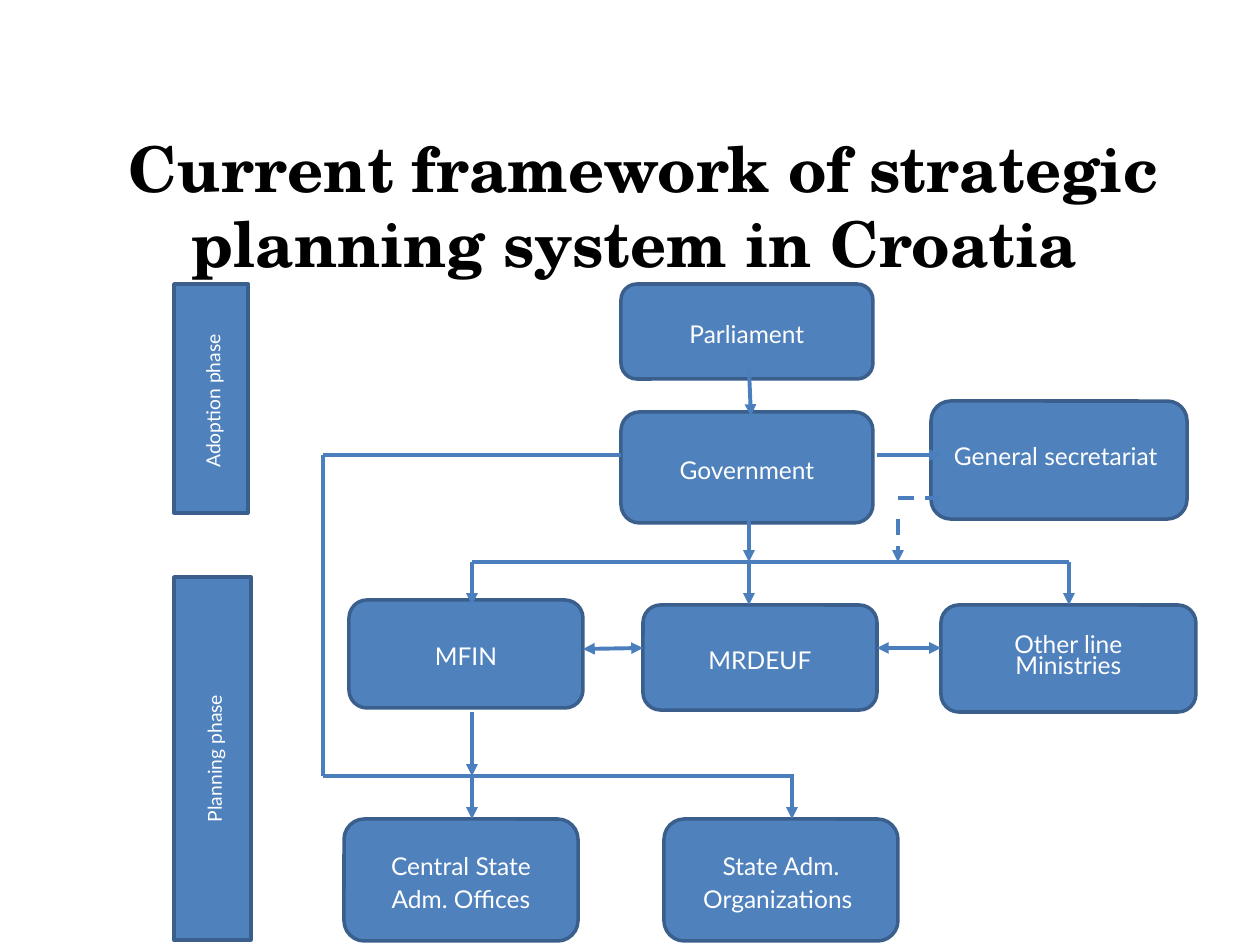
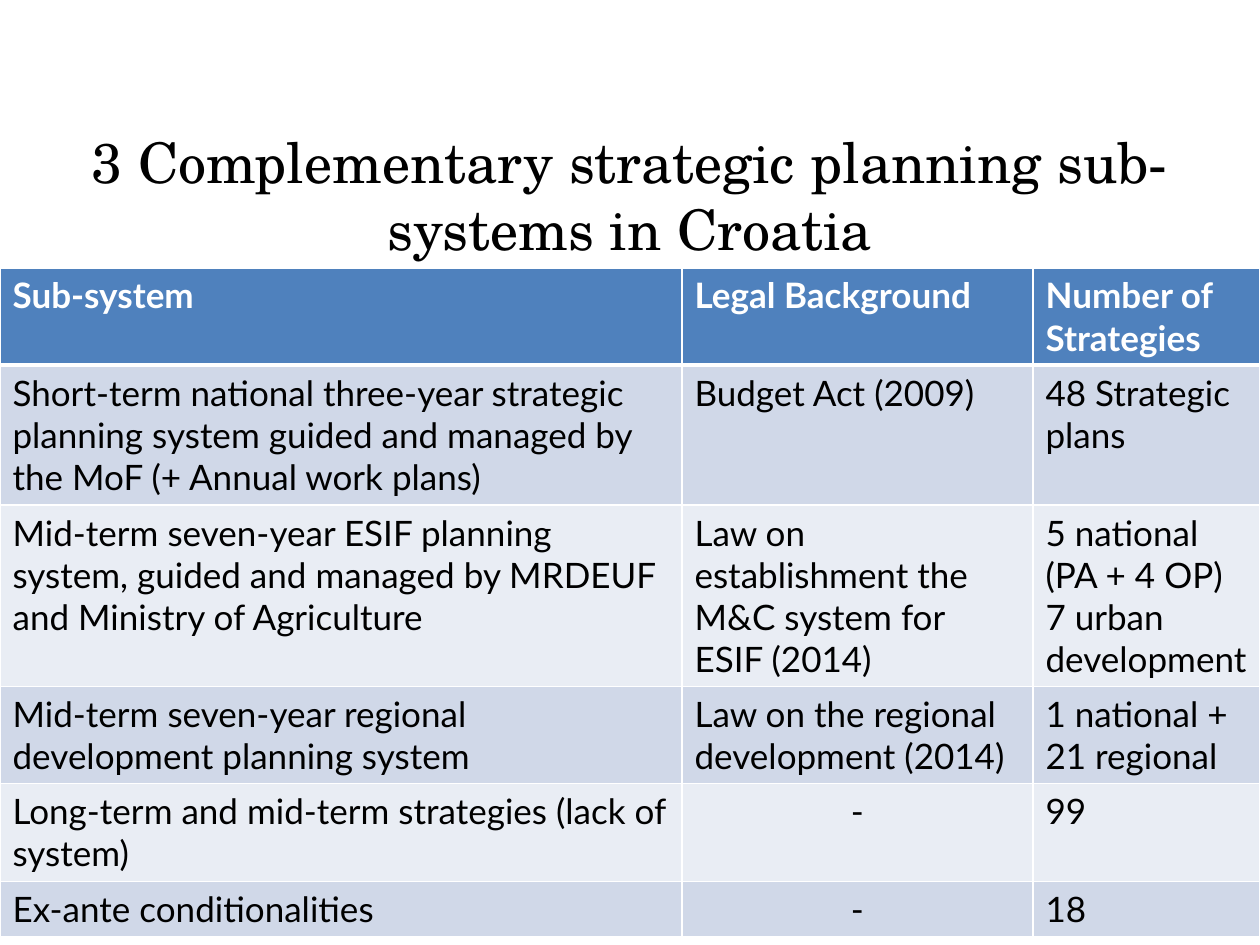
from lxml.etree import SubElement
from pptx import Presentation
from pptx.dml.color import RGBColor
from pptx.enum.dml import MSO_LINE as Dash
from pptx.enum.shapes import MSO_CONNECTOR as Link, MSO_SHAPE as Form
from pptx.enum.text import MSO_ANCHOR as Anchor, MSO_AUTO_SIZE as Fit, PP_ALIGN as Align
from pptx.oxml import parse_xml
from pptx.oxml.ns import nsdecls, qn
from pptx.util import Inches, Pt

# Shared style
SCALE = Inches(1) / 126
BLUE = RGBColor(0x4F, 0x81, 0xBD)
EDGE = RGBColor(0x3A, 0x5F, 0x8C)
WIRE = RGBColor(0x4B, 0x7E, 0xBC)
WHITE = RGBColor(0xFF, 0xFF, 0xFF)
BLACK = RGBColor(0, 0, 0)
BANDS = RGBColor(0xD0, 0xD8, 0xE8), RGBColor(0xE9, 0xED, 0xF4)
SERIF, SANS = "TeX Gyre Schola", "Lato"

# Diagram: text, left, top, width, height, line spacing
TIGHT = Pt(12)
BOXES = [
    ("Government", 621, 412, 252, 111, 1.15),
    ("General secretariat ", 931, 401, 256, 118, TIGHT),
    ("MRDEUF", 643, 605, 234, 105, 1.15),
    ("Other line Ministries", 941, 605, 255, 107, TIGHT),
    ("MFIN", 349, 600, 234, 108, 1.15),
    ("State Adm. Organizations ", 664, 819, 234, 122, 1.15),
    ("Central State Adm. Offices", 344, 819, 234, 122, 1.15),
    ("Parliament", 621, 284, 252, 95, 1.15),
]
PHASES = [
    ("Adoption phase ", 174, 284, 74, 229, 1.15),
    ("Planning phase", 174, 577, 77, 363, 1.15),
]

# Tracks that the lines follow
SIDE, LEFT, MID, ORG, AIDE, RIGHT = 323, 472, 749, 792, 898, 1069
CALL, BUS, LINE, BASE, DROP = 455, 562, 648, 776, 43
PLAIN = [
    (LEFT, BUS, RIGHT, BUS),
    (621, CALL, SIDE, CALL),
    (SIDE, CALL, SIDE, BASE),
    (SIDE, BASE, ORG + 2, BASE),
]
ARROWS = [
    (MID, 369, MID + 2, 416),
    (877, CALL, 941, CALL),
    (MID, 519, MID, BUS),
    (LEFT, 712, LEFT, BASE),
]
ARROWS += [(x, BUS, x, BUS + DROP) for x in (LEFT, MID, RIGHT)]
ARROWS += [(x, BASE, x, BASE + DROP) for x in (LEFT, ORG)]
PAIRS = [(583, LINE + 1, 643, LINE), (877, LINE, 941, LINE)]

# Table
COLS = 682, 351, 227
ROWS = 96, 140, 181, 97, 98, 54
CELLS = [
    ("Sub-system", "Legal Background", "Number of Strategies"),
    ("Short-term national three-year strategic planning system guided and "
     "managed by the MoF (+ Annual work plans)",
     "Budget Act (2009)", "48 Strategic plans"),
    ("Mid-term seven-year ESIF planning system, guided and managed by "
     "MRDEUF and Ministry of Agriculture",
     "Law on establishment the M&C system for ESIF (2014)",
     "5 national (PA + 4 OP)\n7 urban development"),
    ("Mid-term seven-year regional development planning system",
     "Law on the regional development (2014)", "1 national + 21 regional"),
    ("Long-term and mid-term strategies (lack of system)", "-", "99"),
    ("Ex-ante conditionalities", "-", "18"),
]


def px(*nums):
    return [round(n * SCALE) for n in nums]


def style(font, name, size, color, bold=False):
    font.name, font.size, font.bold = name, Pt(size), bold
    font.color.rgb = color


def add_page(deck, text, place, size, bold):
    page = deck.slides.add_slide(deck.slide_layouts[5])
    title = page.shapes.title
    title.left, title.top, title.width, title.height = px(*place)
    frame = title.text_frame
    frame.text = text
    frame.word_wrap, frame.auto_size = True, Fit.NONE
    frame.vertical_anchor = Anchor.MIDDLE
    para = frame.paragraphs[0]
    para.alignment = Align.CENTER
    style(para.font, SERIF, size, BLACK, bold)
    return page


def add_box(page, form, size, text, x, y, w, h, gap):
    box = page.shapes.add_shape(form, *px(x, y, w, h))
    box.shadow.inherit = False
    box.fill.solid()
    box.fill.fore_color.rgb = BLUE
    box.line.color.rgb, box.line.width = EDGE, Pt(2)
    frame = box.text_frame
    frame.text, frame.word_wrap = text, True
    frame.vertical_anchor = Anchor.MIDDLE
    para = frame.paragraphs[0]
    para.alignment, para.line_spacing = Align.CENTER, gap
    para.space_after = Pt(0 if gap == TIGHT else 10)
    style(para.font, SANS, size, WHITE)
    return box


def add_line(page, ends, heads=(), dash=False):
    wire = page.shapes.add_connector(Link.STRAIGHT, *px(*ends))
    wire.line.color.rgb, wire.line.width = WIRE, Pt(2.25)
    if dash:
        wire.line.dash_style = Dash.DASH
    props = wire.element.spPr
    for head in heads:
        SubElement(props.find(qn("a:ln")), qn("a:" + head), type="triangle")
    SubElement(props, qn("a:effectLst"))


def set_edges(cell, top, low):
    props = cell._tc.get_or_add_tcPr()
    edges = ("L", 1), ("R", 1), ("T", top), ("B", low)
    for spot, (side, width) in enumerate(edges):
        props.insert(spot, parse_xml(
            f'<a:ln{side} {nsdecls("a")} w="{Pt(width)}"><a:solidFill>'
            f'<a:srgbClr val="{WHITE}"/></a:solidFill></a:ln{side}>'))


def draw_chart(deck):
    page = add_page(deck, "Current framework of strategic planning system in Croatia ",
                    (43, 126, 1201, 158), 36, True)
    for item in BOXES:
        add_box(page, Form.ROUNDED_RECTANGLE, 14, *item)
    for ends in PLAIN:
        add_line(page, ends)
    for ends in ARROWS:
        add_line(page, ends, ["tailEnd"])
    for ends in PAIRS:
        add_line(page, ends, ["headEnd", "tailEnd"])
    add_line(page, (941, 498, AIDE, 498), dash=True)
    add_line(page, (AIDE, 519, AIDE, BUS), ["tailEnd"], True)
    for item in PHASES:
        bar = add_box(page, Form.RECTANGLE, 11, *item)
        bar.element.txBody.bodyPr.set("vert", "vert270")


def draw_table(deck):
    page = add_page(deck, "3 Complementary strategic planning sub-systems in Croatia",
                    (0, 116, 1260, 158), 32, False)
    size = px(0, 268, sum(COLS), sum(ROWS))
    grid = page.shapes.add_table(len(ROWS), len(COLS), *size).table
    for col, width in zip(grid.columns, px(*COLS)):
        col.width = width
    for row, height in zip(grid.rows, px(*ROWS)):
        row.height = height
    for r, texts in enumerate(CELLS):
        for c, text in enumerate(texts):
            cell = grid.cell(r, c)
            cell.text = text
            cell.fill.solid()
            cell.fill.fore_color.rgb = BANDS[(r - 1) % 2] if r else BLUE
            set_edges(cell, 3 if r == 1 else 1, 1 if r else 3)
            for para in cell.text_frame.paragraphs:
                para.alignment = Align.CENTER if text == "-" else Align.LEFT
                style(para.font, SANS, 20, BLACK if r else WHITE, r == 0)


def main():
    deck = Presentation()
    deck.slide_width, deck.slide_height = px(1260, 945)
    draw_chart(deck)
    draw_table(deck)
    deck.save("out.pptx")


if __name__ == "__main__":
    main()
